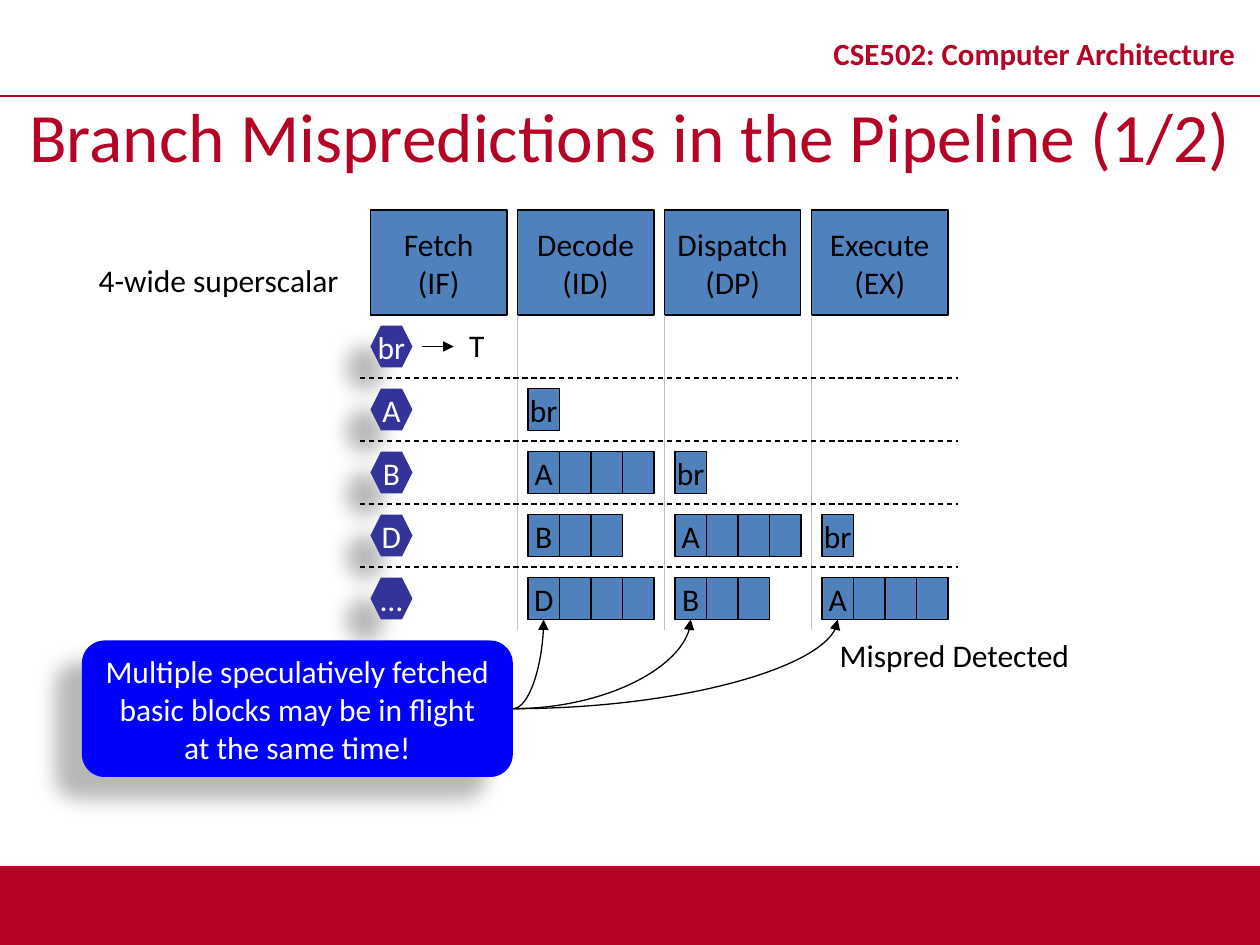
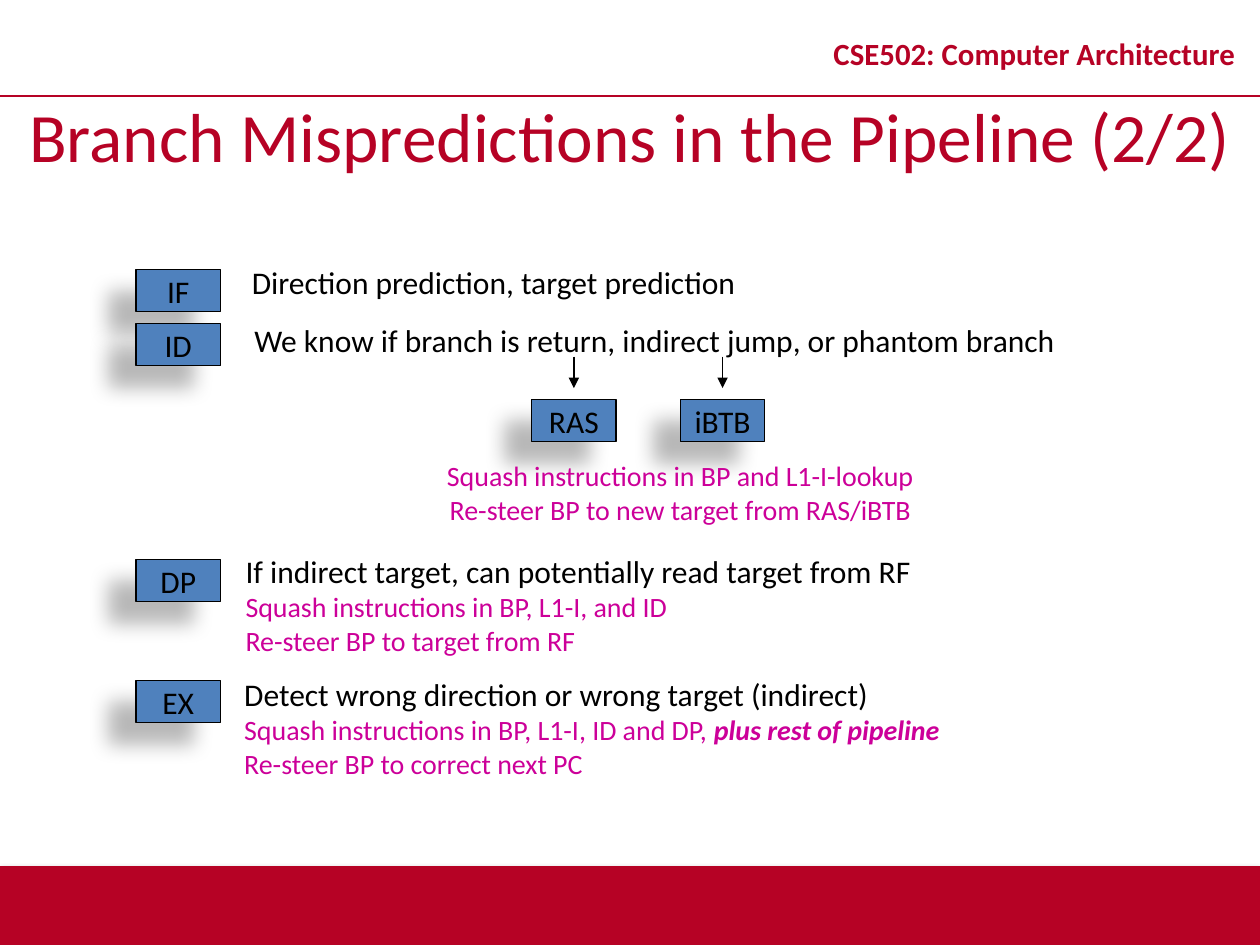
from typing import NamedTuple, Optional

from lxml import etree
from pptx import Presentation
from pptx import util as u
from pptx.dml.color import RGBColor
from pptx.enum import dml, shapes, text
from pptx.oxml.ns import qn

# Shared look
RED = RGBColor(0xB6, 0x02, 0x25)
STEEL = RGBColor(0x4F, 0x81, 0xBD)
INDIGO = RGBColor(0x33, 0x33, 0x99)
BLUE = RGBColor(0x00, 0x00, 0xFF)
MAGENTA = RGBColor(0xCC, 0x00, 0x99)
SILVER = RGBColor(0xC0, 0xC0, 0xC0)
BLACK = RGBColor(0, 0, 0)
WHITE = RGBColor(0xFF, 0xFF, 0xFF)
FONT = "Calibri"
CENTER, LEFT = text.PP_ALIGN.CENTER, text.PP_ALIGN.LEFT
KIND = shapes.MSO_SHAPE
WIDTH, HEIGHT = 10, 7.5
BAND = HEIGHT / 12          # height of the footer and title bands
RULE_Y = 0.76

# Pipeline grid: columns are stages, rows are cycles
GRID_X, GRID_Y = 2.94, 2.5
STAGE_PITCH, STAGE_W, STAGE_H = 7 / 6, 13 / 12, 5 / 6
CYCLE_H = 0.5
GAP = 1 / 12                # margin inside a grid cell
SLOT_W, SLOT_H = 0.25, 1 / 3


class Box(NamedTuple):
    x: float
    y: float
    w: float
    h: float

    def emu(self) -> list:
        return [u.Inches(v) for v in self]


class Run(NamedTuple):
    text: str
    size: float = 18
    color: RGBColor = BLACK
    bold: bool = False
    italic: bool = False


class Shadow(NamedTuple):
    alpha: int
    blur: float
    distance: float
    angle: int


class Block(NamedTuple):
    label: str
    slots: int


class Stage(NamedTuple):
    code: str
    y: float
    note: Box
    lines: list


CAST = Shadow(28, 11.8, 19.7, 141)
BAND_SHADOW = Shadow(35, 3.1, 1.8, 90)


def write(frame, lines: list, *, size: float = 18, color: RGBColor = BLACK, bold: bool = False,
          align=CENTER, anchor=text.MSO_ANCHOR.MIDDLE, wrap: bool = False,
          spacing: Optional[float] = None) -> None:
    """Fill a text frame; each line is a string or a list of runs."""
    frame.word_wrap = wrap
    frame.vertical_anchor = anchor
    for i, line in enumerate(lines):
        paragraph = frame.add_paragraph() if i else frame.paragraphs[0]
        paragraph.alignment = align
        if spacing:
            paragraph.line_spacing = spacing
        for part in [Run(line, size, color, bold)] if isinstance(line, str) else line:
            run = paragraph.add_run()
            run.text = part.text
            font = run.font
            font.name, font.size = FONT, u.Pt(part.size)
            font.bold, font.italic = part.bold, part.italic
            font.color.rgb = part.color


def add_label(slide, box: Box, lines: list, **style):
    label = slide.shapes.add_textbox(*box.emu())
    write(label.text_frame, lines, **{"anchor": text.MSO_ANCHOR.TOP, **style})
    if not style.get("wrap"):
        label.text_frame.auto_size = text.MSO_AUTO_SIZE.SHAPE_TO_FIT_TEXT
    return label


def add_block(slide, box: Box, lines: list, *, kind=KIND.RECTANGLE, fill: RGBColor = STEEL,
              outline: bool = True, shadow: Optional[Shadow] = None, color: RGBColor = BLACK):
    block = slide.shapes.add_shape(kind, *box.emu())
    block.shadow.inherit = False
    block.fill.solid()
    block.fill.fore_color.rgb = fill
    if outline:
        block.line.color.rgb = BLACK
        block.line.width = u.Pt(0.75)
    else:
        block.line.fill.background()
    if shadow:
        effects = block.element.spPr.find(qn("a:effectLst"))
        outer = etree.SubElement(effects, qn("a:outerShdw"), blurRad=str(u.Pt(shadow.blur)),
                                 dist=str(u.Pt(shadow.distance)), dir=str(shadow.angle * 60000),
                                 algn="ctr", rotWithShape="0")
        tint = etree.SubElement(outer, qn("a:srgbClr"), val=str(BLACK))
        etree.SubElement(tint, qn("a:alpha"), val=str(shadow.alpha * 1000))
    write(block.text_frame, lines, color=color)
    return block


def add_line(slide, start: tuple, end: tuple, *, color: RGBColor = BLACK, width: float = 0.75,
             dashed: bool = False, arrow: bool = False, curved: bool = False):
    kind = shapes.MSO_CONNECTOR.CURVE if curved else shapes.MSO_CONNECTOR.STRAIGHT
    line = slide.shapes.add_connector(kind, *(u.Inches(v) for v in start + end))
    line.line.color.rgb = color
    line.line.width = u.Pt(width)
    if dashed:
        line.line.dash_style = dml.MSO_LINE.DASH
    properties = line.element.spPr
    if arrow:
        etree.SubElement(properties.find(qn("a:ln")), qn("a:tailEnd"), type="triangle")
    if curved:  # a quarter bend that leaves sideways and arrives upright
        properties.find(qn("a:prstGeom")).set("prst", "curvedConnector2")
    etree.SubElement(properties, qn("a:effectLst"))
    return line


def set_up_layout(layout, slide) -> None:
    """Give the layout its band, rule and course name, drawn on a slide and moved over."""
    for holder in list(layout.placeholders):
        if holder.placeholder_format.type == shapes.PP_PLACEHOLDER.TITLE:
            holder.left, holder.top, holder.width, holder.height = Box(0, RULE_Y, WIDTH, BAND).emu()
        else:
            holder.element.getparent().remove(holder.element)
    band = add_block(slide, Box(0, HEIGHT - BAND, WIDTH, BAND), [], fill=RED, outline=False,
                     shadow=BAND_SHADOW)
    rule = add_line(slide, (0, RULE_Y), (WIDTH, RULE_Y), color=RED, width=1)
    course = add_label(slide, Box(6.42, RULE_Y - BAND, 3.58, BAND), ["CSE502: Computer Architecture"],
                       size=17.6, color=RED, bold=True, wrap=True, spacing=0.8,
                       anchor=text.MSO_ANCHOR.MIDDLE)
    for part in (band, rule, course):
        layout.shapes.element.append(part.element)


def add_title(slide, part: int) -> None:
    frame = slide.shapes.title.text_frame
    frame.auto_size = text.MSO_AUTO_SIZE.NONE
    write(frame, [f"Branch Mispredictions in the Pipeline ({part}/2)"], size=39.6, color=RED, wrap=True)


def stage_x(stage: int) -> float:
    return GRID_X + stage * STAGE_PITCH


def cycle_y(cycle: int) -> float:
    return GRID_Y + cycle * CYCLE_H


def draw_pipeline(slide) -> None:
    add_title(slide, 1)
    stages = [("Fetch", "(IF)"), ("Decode", "(ID)"), ("Dispatch", "(DP)"), ("Execute", "(EX)")]
    fetched = [Block("br", 1), Block("A", 4), Block("B", 3), Block("D", 4), Block("…", 0)]
    bottom = cycle_y(len(fetched))

    # Stage headings and separators
    for stage, heading in enumerate(stages):
        x = stage_x(stage)
        add_block(slide, Box(x, GRID_Y - STAGE_H, STAGE_W, STAGE_H), heading)
        if stage:
            add_line(slide, (x, GRID_Y), (x, bottom), color=SILVER)
    add_label(slide, Box(0.68, 2.02, 2.11, 0.4), ["4-wide superscalar"])

    # Each cycle fetches one block and moves the earlier ones a stage on
    for cycle, block in enumerate(fetched):
        y = cycle_y(cycle) + GAP
        if cycle:
            line_y = cycle_y(cycle)
            add_line(slide, (GRID_X - GAP, line_y), (stage_x(4), line_y), dashed=True)
        add_block(slide, Box(GRID_X, y, SLOT_H, SLOT_H), [block.label], kind=KIND.HEXAGON,
                  fill=INDIGO, outline=False, shadow=CAST, color=WHITE)
        for stage in range(1, min(cycle + 1, len(stages))):
            moved = fetched[cycle - stage]
            for slot in range(moved.slots):
                add_block(slide, Box(stage_x(stage) + GAP + slot * SLOT_W, y, SLOT_W, SLOT_H),
                          [] if slot else [moved.label])

    # Predicted direction and its outcome
    add_line(slide, (3.35, 2.75), (3.6, 2.75), arrow=True)
    add_label(slide, Box(3.61, 2.54, 0.35, 0.4), ["T"])
    add_label(slide, Box(6.55, bottom, 2.05, 0.4), ["Mispred Detected"])

    # Callout pointing at the blocks in flight
    callout = Box(0.65, bottom + GAP, 3.42, STAGE_W)
    add_block(slide, callout,
              ["Multiple speculatively fetched", "basic blocks may be in flight", "at the same time!"],
              kind=KIND.ROUNDED_RECTANGLE, fill=BLUE, outline=False, shadow=CAST, color=WHITE)
    for stage in range(1, len(stages)):
        add_line(slide, (callout.x + callout.w, callout.y + callout.h / 2),
                 (stage_x(stage) + GAP + SLOT_W / 2, bottom - GAP), arrow=True, curved=True)


def draw_recovery(slide) -> None:
    add_title(slide, 2)
    tag_w, tag_h = 0.67, SLOT_H

    def action(words: str, **style) -> Run:
        return Run(words, 16, MAGENTA, **style)

    stages = [
        Stage("IF", 2.14, Box(1.9, 2.04, 4.11, 0.4), ["Direction prediction, target prediction"]),
        Stage("ID", 2.57, Box(1.92, 2.5, 6.62, 0.4),
              ["We know if branch is return, indirect jump, or phantom branch"]),
        Stage("DP", 4.44, Box(1.85, 4.33, 5.52, 0.94),
              ["If indirect target, can potentially read target from RF",
               [action("Squash instructions in BP, L1-I, and ID")],
               [action("Re-steer BP to target from RF")]]),
        Stage("EX", 5.4, Box(1.84, 5.31, 5.93, 0.94),
              ["Detect wrong direction or wrong target (indirect)",
               [action("Squash instructions in BP, L1-I, ID and DP, "),
                action("plus rest of pipeline", bold=True, italic=True)],
               [action("Re-steer BP to correct next PC")]]),
    ]
    for stage in stages:
        add_block(slide, Box(1.08, stage.y, tag_w, tag_h), [stage.code], shadow=CAST)
        add_label(slide, stage.note, stage.lines, align=LEFT)

    # Target predictors used at decode
    for predictor, x in (("RAS", 4.22), ("iBTB", 5.4)):
        add_block(slide, Box(x, 3.17, tag_w, tag_h), [predictor], shadow=CAST)
        add_line(slide, (x + tag_w / 2, 2.83), (x + tag_w / 2, 3.08), arrow=True)
    add_label(slide, Box(3.38, 3.59, 4.04, 0.64),
              ["Squash instructions in BP and L1-I-lookup", "Re-steer BP to new target from RAS/iBTB"],
              size=16, color=MAGENTA)


def main() -> None:
    deck = Presentation()
    deck.slide_width, deck.slide_height = u.Inches(WIDTH), u.Inches(HEIGHT)
    layout = deck.slide_layouts.get_by_name("Title Only")
    pipeline, recovery = (deck.slides.add_slide(layout) for _ in range(2))
    set_up_layout(layout, pipeline)
    draw_pipeline(pipeline)
    draw_recovery(recovery)
    deck.save("out.pptx")


if __name__ == "__main__":
    main()
